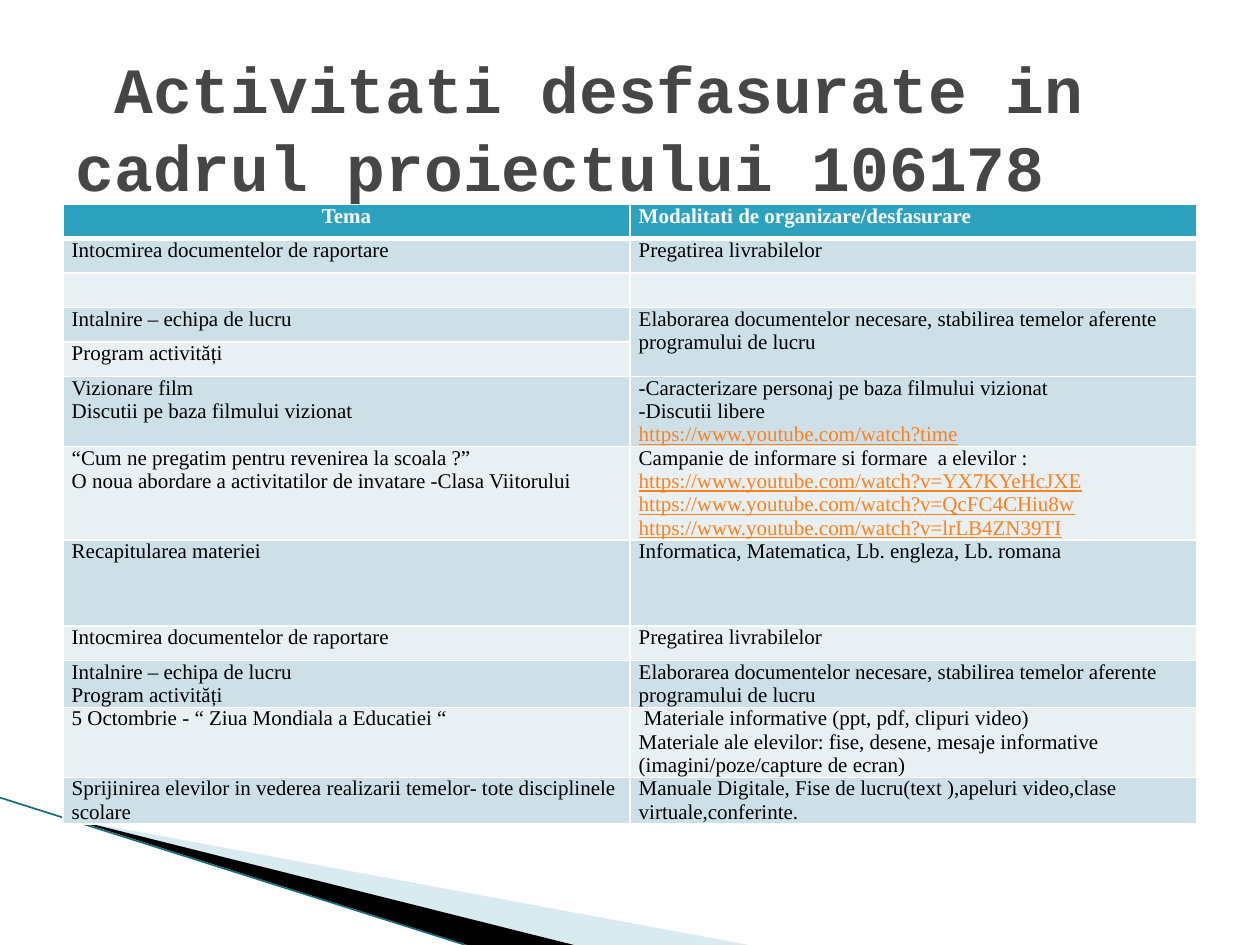
from dataclasses import dataclass

from lxml.etree import SubElement
from pptx import Presentation
from pptx.dml.color import RGBColor
from pptx.enum.shapes import MSO_CONNECTOR as Link
from pptx.enum.text import MSO_ANCHOR as Anchor, MSO_AUTO_SIZE as Fit, PP_ALIGN as Align
from pptx.oxml.ns import qn
from pptx.util import Pt

WHITE = RGBColor(0xFF, 0xFF, 0xFF)
BLACK = RGBColor(0, 0, 0)
GREY = RGBColor(0x46, 0x46, 0x46)
TEAL = RGBColor(0x2D, 0xA2, 0xBF)
DEEP = RGBColor(0x14, 0x6C, 0x80)
MIST = RGBColor(0xA0, 0xCB, 0xDC)
ORANGE = RGBColor(0xFF, 0x81, 0x19)
BANDS = (RGBColor(0xE8, 0xF0, 0xF4), RGBColor(0xCD, 0xE0, 0xE8))


@dataclass
class Row:
    theme: list[str]
    mode: list[str]
    height: float = 19.7


@dataclass
class Wedge:
    points: list[tuple[float, float]]
    color: RGBColor
    alpha: int = 100


WEDGES = [
    Wedge([(39.6, 468), (428, 540), (328, 540)], MIST, 40),
    Wedge([(38.2, 467.3), (328, 540), (267, 540)], BLACK),
]

REPORT = "Intocmirea documentelor de raportare"
DELIVER = "Pregatirea livrabilelor"
MEETING = "Intalnire – echipa de lucru"
PROGRAM = "Program activități"
DOCS = "Elaborarea documentelor necesare, stabilirea temelor aferente programului de lucru"
SITE = "https://www.youtube.com/watch?"

ROWS = [
    Row(["Tema"], ["Modalitati de organizare/desfasurare"]),
    Row([REPORT], [DELIVER]),
    Row([], []),
    Row([MEETING], [DOCS]),
    Row([PROGRAM], []),
    Row(["Vizionare film", "Discutii pe baza filmului vizionat"],
        ["-Caracterizare personaj pe baza filmului vizionat",
         "-Discutii libere", SITE + "time"], 40),
    Row(["“Cum ne pregatim pentru revenirea la scoala ?”",
         "O noua abordare a activitatilor de invatare -Clasa Viitorului"],
        ["Campanie de informare si formare  a elevilor :",
         SITE + "v=YX7KYeHcJXE", SITE + "v=QcFC4CHiu8w", SITE + "v=lrLB4ZN39TI"], 53.4),
    Row(["Recapitularea materiei"],
        ["Informatica, Matematica, Lb. engleza, Lb. romana"], 49.2),
    Row([REPORT], [DELIVER]),
    Row([MEETING, PROGRAM], [DOCS], 26.8),
    Row(["5 Octombrie - “ Ziua Mondiala a Educatiei “"],
        [" Materiale informative (ppt, pdf, clipuri video)",
         "Materiale ale elevilor: fise, desene, mesaje informative "
         "(imagini/poze/capture de ecran)"], 40),
    Row(["Sprijinirea elevilor in vederea realizarii temelor- tote disciplinele scolare"],
        ["Manuale Digitale, Fise de lucru(text ),apeluri video,clase virtuale,conferinte."], 26.8),
]


def add_title(slide, text: str) -> None:
    title = slide.shapes.title
    title.left, title.top, title.width, title.height = Pt(36), Pt(21.6), Pt(648), Pt(90)
    frame = title.text_frame
    frame.auto_size, frame.word_wrap = Fit.NONE, True
    frame.vertical_anchor = Anchor.TOP
    frame.margin_top, frame.margin_bottom = Pt(6), 0
    para = frame.paragraphs[0]
    para.alignment, para.line_spacing = Align.LEFT, Pt(44.6)
    run = para.add_run()
    run.text = text
    font = run.font
    font.name, font.size, font.bold = "Courier New", Pt(36.9), True
    font.color.rgb = GREY


def add_wedge(slide, wedge: Wedge) -> None:
    points = [(Pt(x), Pt(y)) for x, y in wedge.points]
    pen = slide.shapes.build_freeform(*points[0])
    pen.add_line_segments(points[1:], close=True)
    shape = pen.convert_to_shape()
    shape.shadow.inherit = False
    shape.fill.solid()
    shape.fill.fore_color.rgb = wedge.color
    shape.line.fill.background()
    if wedge.alpha < 100:
        color = shape.fill._xPr.find(".//" + qn("a:srgbClr"))
        SubElement(color, qn("a:alpha"), val=str(wedge.alpha * 1000))


def add_edge(slide) -> None:
    edge = slide.shapes.add_connector(Link.STRAIGHT, 0, Pt(455.8), Pt(266), Pt(540))
    edge.line.color.rgb, edge.line.width = DEEP, Pt(0.95)
    SubElement(edge._element.spPr, qn("a:effectLst"))


def set_border(cell, below: float) -> None:
    props = cell._tc.get_or_add_tcPr()
    for side, width in (("L", 1), ("R", 1), ("T", 1), ("B", below)):
        line = SubElement(props, qn("a:ln" + side), w=str(Pt(width)))
        fill = SubElement(line, qn("a:solidFill"))
        SubElement(fill, qn("a:srgbClr"), val=str(WHITE))


def fill_cell(cell, lines: list[str], head: bool, color: RGBColor) -> None:
    set_border(cell, 3 if head else 1)
    cell.fill.solid()
    cell.fill.fore_color.rgb = color
    cell.margin_left = cell.margin_right = Pt(5)
    cell.margin_top = cell.margin_bottom = 0
    frame = cell.text_frame
    frame.paragraphs[0].font.size = Pt(12)
    for i, text in enumerate(lines):
        para = frame.add_paragraph() if i else frame.paragraphs[0]
        run = para.add_run()
        run.text = text
        font = run.font
        font.name, font.size, font.bold = "Times New Roman", Pt(12), head
        link = text.startswith(SITE)
        font.underline = link
        font.color.rgb = WHITE if head else ORANGE if link else BLACK


def add_grid(slide) -> None:
    total = sum(row.height for row in ROWS)
    grid = slide.shapes.add_table(len(ROWS), 2, Pt(36), Pt(116.8), Pt(648), Pt(total)).table
    for i, row in enumerate(ROWS):
        grid.rows[i].height = Pt(row.height)
        for j, lines in enumerate((row.theme, row.mode)):
            fill_cell(grid.cell(i, j), lines, i == 0, BANDS[i % 2] if i else TEAL)
    grid.cell(0, 0).text_frame.paragraphs[0].alignment = Align.CENTER
    grid.cell(0, 1).text_frame.paragraphs[0].alignment = Align.JUSTIFY
    # One description serves both the meeting and the program rows
    grid.cell(3, 1).merge(grid.cell(4, 1))


def main() -> None:
    deck = Presentation()
    deck.slide_width, deck.slide_height = Pt(720), Pt(540)
    slide = deck.slides.add_slide(deck.slide_layouts[5])
    # Corner decoration
    for wedge in WEDGES:
        add_wedge(slide, wedge)
    add_edge(slide)
    # Title and activity table
    add_title(slide, " Activitati desfasurate in cadrul proiectului 106178")
    add_grid(slide)
    deck.save("out.pptx")


if __name__ == "__main__":
    main()
